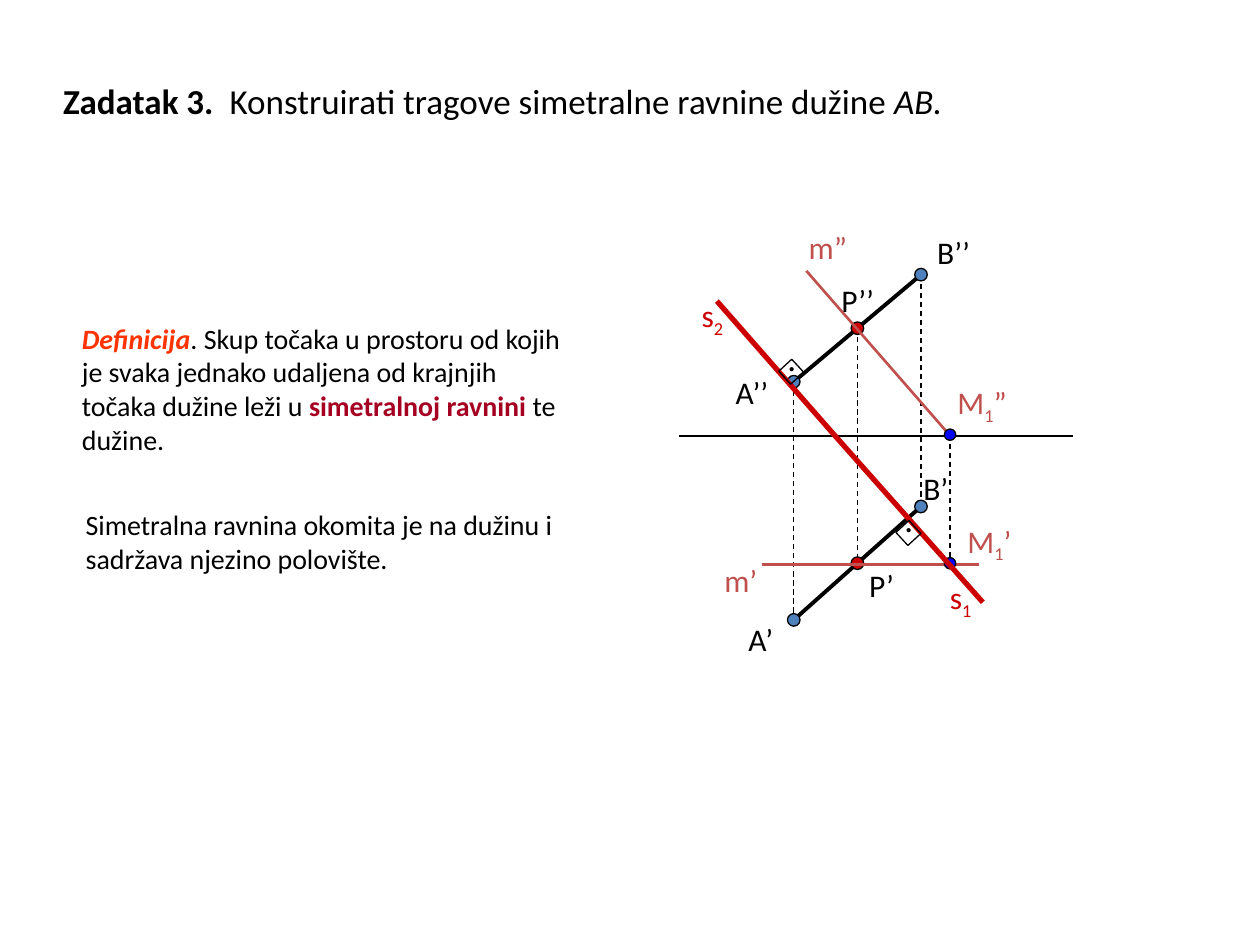
from lxml.etree import SubElement
from pptx import Presentation
from pptx.dml.color import RGBColor
from pptx.enum.dml import MSO_LINE
from pptx.enum.shapes import MSO_CONNECTOR, MSO_SHAPE
from pptx.enum.text import MSO_ANCHOR, MSO_AUTO_SIZE, PP_ALIGN
from pptx.oxml.ns import qn
from pptx.util import Inches, Pt

BLACK = RGBColor(0x00, 0x00, 0x00)
ORANGE = RGBColor(0xFF, 0x33, 0x00)
WINE = RGBColor(0xA5, 0x00, 0x21)
STEEL = RGBColor(0x4F, 0x81, 0xBD)
RED = RGBColor(0xCC, 0x00, 0x00)
BRICK = RGBColor(0xC0, 0x50, 0x4D)
BLUE = RGBColor(0x00, 0x00, 0xFF)

# Prose: box, size, runs of (text, bold, italic, colour)
PROSE = [
    ((0.4, 0.58, 7.25, 0.44), 20, [
        ("Zadatak 3.  ", True, False, BLACK),
        ("Konstruirati tragove simetralne ravnine dužine ", False, False, BLACK),
        ("AB.", False, True, BLACK)]),
    ((0.55, 2.5, 4.04, 1.18), 16, [
        ("Definicija", True, True, ORANGE),
        (". Skup točaka u prostoru od kojih je svaka jednako udaljena "
         "od krajnjih točaka dužine leži u ", False, False, BLACK),
        ("simetralnoj ravnini", True, False, WINE),
        (" te dužine.", False, False, BLACK)]),
    ((0.58, 3.98, 4.03, 0.64), 16, [
        ("Simetralna ravnina okomita je na dužinu i sadržava njezino "
         "polovište.", False, False, BLACK)]),
]

# Points of the drawing: 1 is the plan, 2 is the elevation
AXIS = 3.46
POINTS = {
    "A1": (6.3, 4.92), "A2": (6.3, 3.03),
    "B1": (7.31, 4.02), "B2": (7.31, 2.18),
    "M1": (7.54, 4.47), "M2": (7.54, 3.45),
}
for view in "12":
    ends = zip(POINTS["A" + view], POINTS["B" + view])
    POINTS["P" + view] = tuple((a + b) / 2 for a, b in ends)

DOTS = {"A": (STEEL, 0.1), "B": (STEEL, 0.1), "P": (RED, 0.1), "M": (BLUE, 0.09)}
TRACES = [((6.4, 2.15), (7.56, 3.48)), ((6.05, 4.48), (7.77, 4.48))]
BEND = (6.62, 3.45)
PLANE = [(BEND, (7.8, 4.78)), ((5.69, 2.39), BEND)]
CORNERS = [(7.21, 4.23), (6.28, 2.95)]

# Labels: left, top, width, letter, subscript, prime marks, colour
LABELS = [
    (5.84, 4.87, 0.48, "A", "", "’", BLACK),
    (7.23, 3.67, 0.52, "B", "", "’", BLACK),
    (5.74, 2.91, 0.6, "A", "", "’’", BLACK),
    (7.34, 1.8, 0.56, "B", "", "’’", BLACK),
    (6.8, 4.44, 0.46, "P", "", "’", BLACK),
    (6.58, 2.18, 0.53, "P", "", "’’", BLACK),
    (6.32, 1.76, 0.62, "m", "", "”", BRICK),
    (5.65, 4.4, 0.67, "m", "", "’", BRICK),
    (7.5, 2.99, 0.66, "M", "1", "”", BRICK),
    (7.58, 4.09, 0.65, "M", "1", "’", BRICK),
    (7.44, 4.54, 0.45, "s", "1", "", RED),
    (5.47, 2.3, 0.44, "s", "2", "", RED),
]

deck = Presentation()
deck.slide_width, deck.slide_height = Inches(10), Inches(7.5)
slide = deck.slides.add_slide(deck.slide_layouts[3])
shapes = slide.shapes


def add_run(para, text, size, color, bold=False, italic=False):
    run = para.add_run()
    run.text = text
    font = run.font
    font.name, font.size = "Calibri", Pt(size)
    font.bold, font.italic = bold, italic
    font.color.rgb = color
    return run


def fill_holder(holder, box, size, runs):
    holder.left, holder.top, holder.width, holder.height = map(Inches, box)
    frame = holder.text_frame
    frame.word_wrap = True
    frame.auto_size = MSO_AUTO_SIZE.NONE
    frame.vertical_anchor = MSO_ANCHOR.TOP
    para = frame.paragraphs[0]
    para.alignment = PP_ALIGN.LEFT
    para.space_before = Pt(0)
    props = para._p.get_or_add_pPr()
    props.set("marL", "0")
    props.set("indent", "0")
    SubElement(props, qn("a:buNone"))
    for text, bold, italic, color in runs:
        add_run(para, text, size, color, bold, italic)


def add_line(start, end, color=BLACK, width=0.75, dash=False):
    line = shapes.add_connector(MSO_CONNECTOR.STRAIGHT, *map(Inches, start + end))
    line.line.color.rgb = color
    line.line.width = Pt(width)
    if dash:
        line.line.dash_style = MSO_LINE.DASH
    SubElement(line._element.spPr, qn("a:effectLst"))


def add_mark(kind, center, size, color=None):
    x, y = center
    mark = shapes.add_shape(kind, Inches(x - size / 2), Inches(y - size / 2),
                            Inches(size), Inches(size))
    mark.shadow.inherit = False
    mark.line.color.rgb = BLACK
    mark.line.width = Pt(0.75)
    if color is None:
        mark.fill.background()
    else:
        mark.fill.solid()
        mark.fill.fore_color.rgb = color
    return mark


def add_box(left, top, width, height):
    box = shapes.add_textbox(*map(Inches, (left, top, width, height)))
    box.text_frame.word_wrap = True
    return box.text_frame.paragraphs[0]


# Title and the two statements
for holder, item in zip(slide.placeholders, PROSE):
    fill_holder(holder, *item)

# Axis, both views of AB, and the verticals that join the views
add_line((5.39, AXIS), (8.52, AXIS))
for view in "12":
    add_line(POINTS["A" + view], POINTS["B" + view], width=2.25)
for name in DOTS:
    add_line(POINTS[name + "2"], POINTS[name + "1"], dash=True)

# Points below and above the line m
for name, (color, size) in DOTS.items():
    if name == "M":
        for start, end in TRACES:
            add_line(start, end, BRICK, 1.5)
    for view in "12":
        add_mark(MSO_SHAPE.OVAL, POINTS[name + view], size, color)

# Traces of the plane, with right angles
for (start, end), (x, y) in zip(PLANE, CORNERS):
    add_line(start, end, RED, 3)
    add_mark(MSO_SHAPE.RECTANGLE, (x, y), 0.14).rotation = 317.3
    add_run(add_box(x - 0.13, y - 0.33, 0.22, 0.43), ".", 20, BLACK)

# Labels
for left, top, width, letter, sub, prime, color in LABELS:
    para = add_box(left, top, width, 0.4)
    add_run(para, letter, 18, color)
    if sub:
        run = add_run(para, sub, 18, color)
        run._r.get_or_add_rPr().set("baseline", "-25000")
    if prime:
        add_run(para, prime, 18, color)

deck.save("out.pptx")
